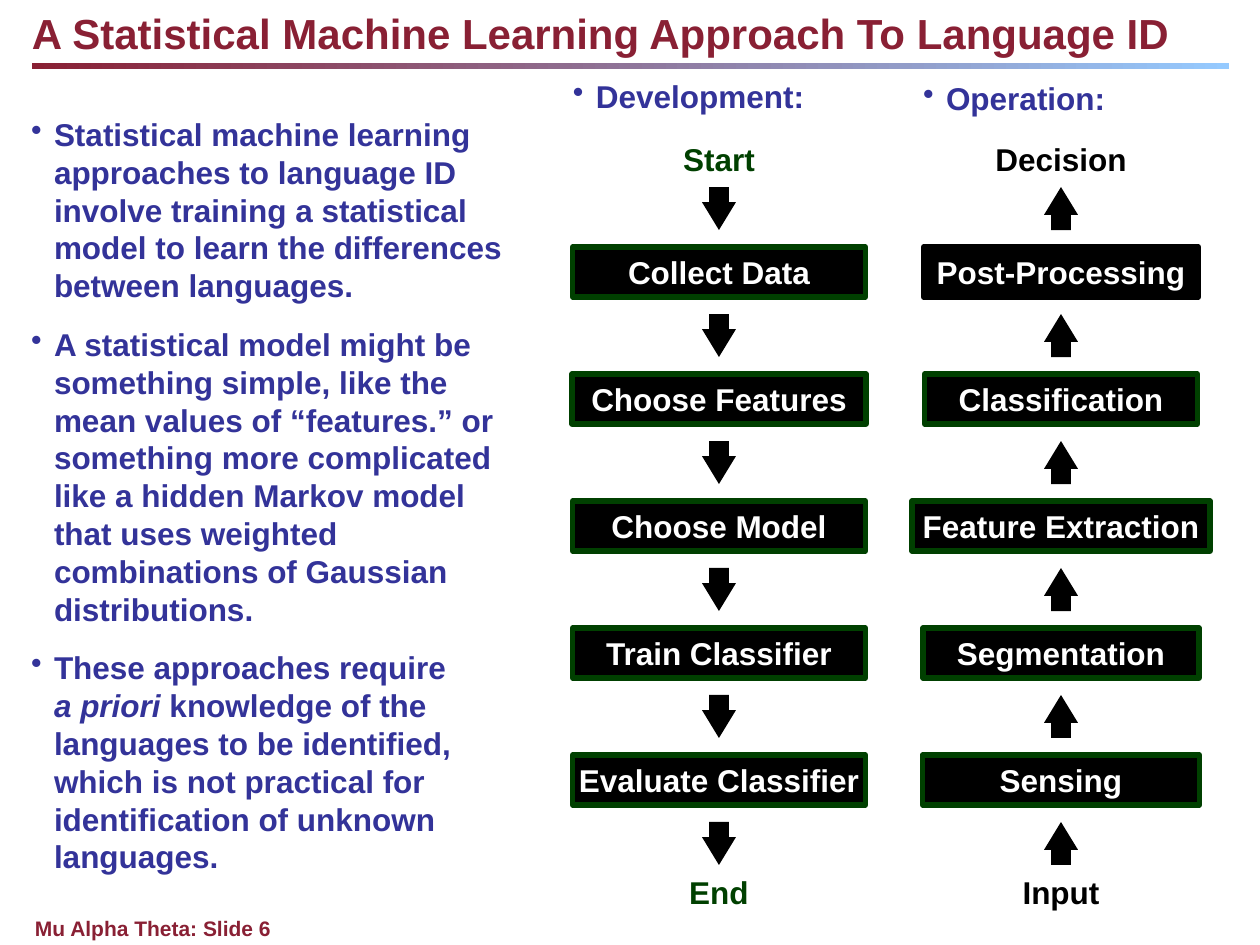
from dataclasses import dataclass

from lxml import etree
from pptx import Presentation
from pptx.dml.color import RGBColor
from pptx.enum.shapes import MSO_SHAPE
from pptx.enum.text import MSO_ANCHOR, PP_ALIGN
from pptx.oxml.ns import qn
from pptx.util import Pt

EMU_PER_PX = 914400 / 126
FONT = "Arial"
RECT, UP, DOWN = MSO_SHAPE.RECTANGLE, MSO_SHAPE.UP_ARROW, MSO_SHAPE.DOWN_ARROW
LEFT, CENTER = PP_ALIGN.LEFT, PP_ALIGN.CENTER
TOP, MIDDLE = MSO_ANCHOR.TOP, MSO_ANCHOR.MIDDLE

MAROON = RGBColor(0x89, 0x20, 0x34)
SKY = RGBColor(0x95, 0xCA, 0xFF)
INDIGO = RGBColor(0x33, 0x33, 0x99)
GREEN = RGBColor(0x00, 0x40, 0x00)
BLACK = RGBColor(0x00, 0x00, 0x00)
WHITE = RGBColor(0xFF, 0xFF, 0xFF)

# Flow grid, in px
ROW_STEP = 127
FIRST_STEP_TOP, STEP_HEIGHT = 247, 50
FIRST_ARROW_TOP, ARROW_WIDTH, ARROW_HEIGHT = 187, 34, 43
TOP_LABEL_Y, BOTTOM_LABEL_Y = 140, 873
LABEL_WIDTH, LINE_HEIGHT = 160, 38
BULLET_INDENT = 23


@dataclass(frozen=True)
class Step:
    text: str
    width: int
    border: RGBColor = GREEN


@dataclass(frozen=True)
class Flow:
    center: int
    arrow: MSO_SHAPE
    top_label: str
    bottom_label: str
    label_color: RGBColor
    steps: tuple[Step, ...]


@dataclass(frozen=True)
class Run:
    text: str
    italic: bool = False
    break_after: bool = False


FLOWS = (
    Flow(719, DOWN, "Start", "End", GREEN, (
        Step("Collect Data", 293),
        Step("Choose Features", 294),
        Step("Choose Model", 293),
        Step("Train Classifier", 293),
        Step("Evaluate Classifier", 293),
    )),
    Flow(1061, UP, "Decision", "Input", BLACK, (
        Step("Post-Processing", 275, BLACK),
        Step("Classification", 273),
        Step("Feature Extraction", 298),
        Step("Segmentation", 276),
        Step("Sensing", 277),
    )),
)

POINTS = (
    (Run("Statistical machine learning approaches to language ID involve "
         "training a statistical model to learn the differences between "
         "languages."),),
    (Run("A statistical model might be something simple, like the mean "
         "values of “features.” or something more complicated like a hidden "
         "Markov model that uses weighted combinations of Gaussian "
         "distributions."),),
    (Run("These approaches require", break_after=True),
     Run("a priori", italic=True),
     Run(" knowledge of the languages to be identified, which is not "
         "practical for identification of unknown languages.")),
)


def px(length: float) -> int:
    return round(length * EMU_PER_PX)


def add_block(slide, kind, left, top, width, height):
    shape = slide.shapes.add_shape(kind, px(left), px(top), px(width), px(height))
    shape.shadow.inherit = False
    shape.fill.solid()
    shape.fill.fore_color.rgb = BLACK
    shape.line.fill.background()
    return shape


def add_bullet(paragraph) -> None:
    properties = paragraph._p.get_or_add_pPr()
    properties.set("marL", str(px(BULLET_INDENT)))
    properties.set("indent", str(-px(BULLET_INDENT)))
    etree.SubElement(properties, qn("a:buChar")).set("char", "•")


def write(frame, paragraphs, size: int, color: RGBColor, align=LEFT,
          anchor=TOP, bullets: bool = False, gap: int = 0) -> None:
    frame.margin_left = frame.margin_right = 0
    frame.margin_top = frame.margin_bottom = 0
    frame.word_wrap = True
    frame.vertical_anchor = anchor
    for index, runs in enumerate(paragraphs):
        paragraph = frame.add_paragraph() if index else frame.paragraphs[0]
        paragraph.alignment = align
        paragraph.space_after = Pt(gap)
        if bullets:
            add_bullet(paragraph)
        for part in runs:
            run = paragraph.add_run()
            run.text = part.text
            font = run.font
            font.name, font.size, font.bold = FONT, Pt(size), True
            font.italic = part.italic
            font.color.rgb = color
            if part.break_after:
                paragraph.add_line_break()


def add_text(slide, left, top, width, height, paragraphs, size, color, **layout):
    box = slide.shapes.add_textbox(px(left), px(top), px(width), px(height))
    write(box.text_frame, paragraphs, size, color, **layout)


def draw_flow(slide, flow: Flow) -> None:
    # Labels at both ends
    for text, top in ((flow.top_label, TOP_LABEL_Y),
                      (flow.bottom_label, BOTTOM_LABEL_Y)):
        add_text(slide, flow.center - LABEL_WIDTH / 2, top, LABEL_WIDTH,
                 LINE_HEIGHT, ((Run(text),),), 18, flow.label_color,
                 align=CENTER, anchor=MIDDLE)
    # Steps
    for row, step in enumerate(flow.steps):
        box = add_block(slide, RECT, flow.center - step.width / 2,
                        FIRST_STEP_TOP + row * ROW_STEP, step.width, STEP_HEIGHT)
        box.line.color.rgb = step.border
        box.line.width = Pt(3)
        write(box.text_frame, ((Run(step.text),),), 18, WHITE,
              align=CENTER, anchor=MIDDLE)
    # Arrows before, between and after the steps
    for row in range(len(flow.steps) + 1):
        arrow = add_block(slide, flow.arrow, flow.center - ARROW_WIDTH / 2,
                          FIRST_ARROW_TOP + row * ROW_STEP,
                          ARROW_WIDTH, ARROW_HEIGHT)
        arrow.adjustments[0] = 0.58
        arrow.adjustments[1] = 0.82


def main() -> None:
    deck = Presentation()
    deck.slide_width, deck.slide_height = px(1260), px(945)
    slide = deck.slides.add_slide(deck.slide_layouts[6])

    # Title, rule and footer
    add_text(slide, 32, 8, 1193, 50,
             ((Run("A Statistical Machine Learning Approach To Language ID"),),),
             24, MAROON)
    rule = add_block(slide, RECT, 32, 63, 1197, 6)
    rule.fill.gradient()
    rule.fill.gradient_angle = 0
    for stop, color in zip(rule.fill.gradient_stops, (MAROON, SKY)):
        stop.color.rgb = color
    add_text(slide, 35, 916, 1124, 25, ((Run("Mu Alpha Theta: Slide 6"),),),
             12, MAROON)

    # Explanation
    add_text(slide, 31, 115, 475, 767, POINTS, 18, INDIGO, bullets=True, gap=12)

    # Flows and their headings
    add_text(slide, 573, 77, 249, LINE_HEIGHT, ((Run("Development:"),),),
             18, INDIGO, bullets=True)
    add_text(slide, 923, 79, 233, LINE_HEIGHT, ((Run("Operation:"),),),
             18, INDIGO, bullets=True)
    for flow in FLOWS:
        draw_flow(slide, flow)

    deck.save("out.pptx")


if __name__ == "__main__":
    main()
